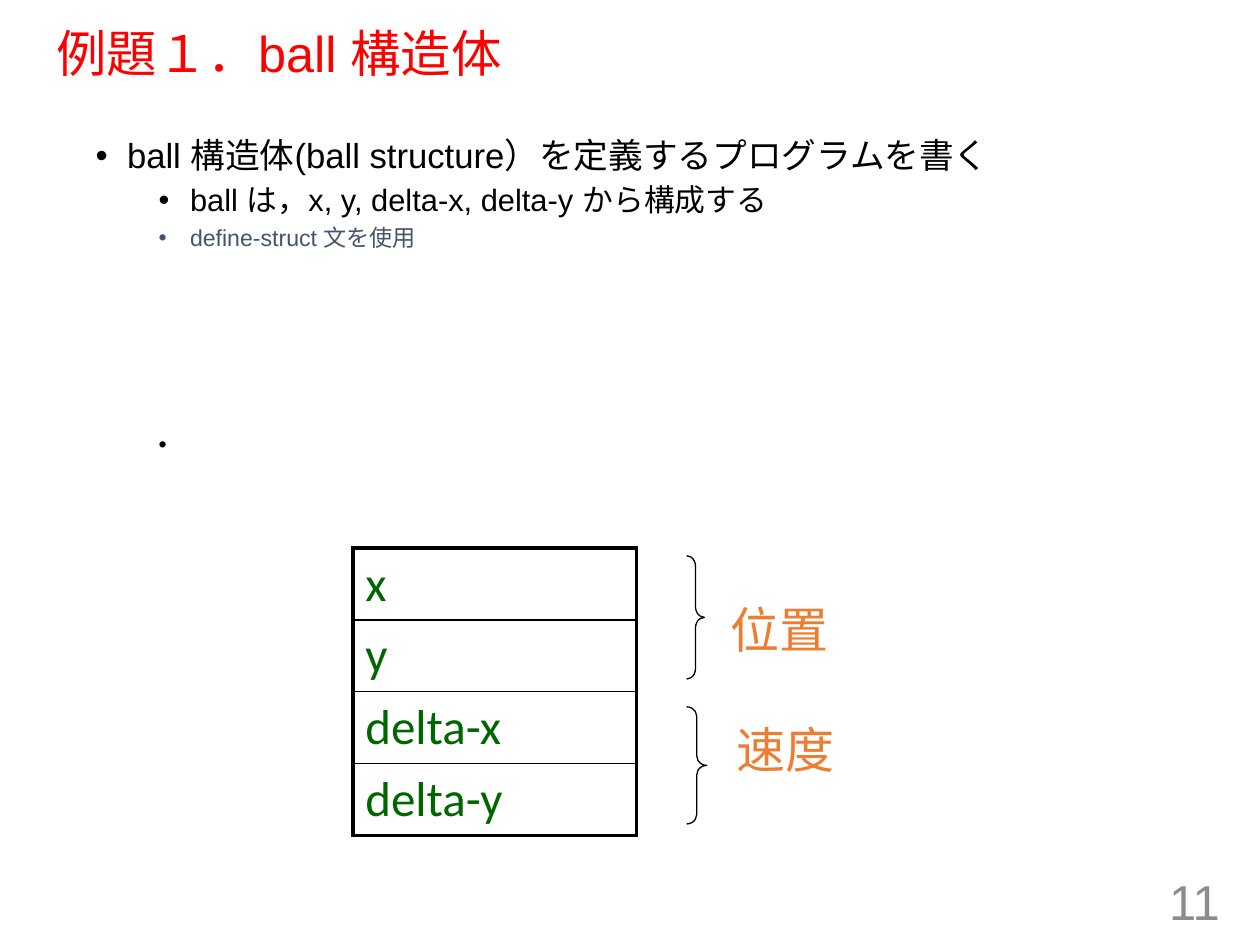
from pptx import Presentation
from pptx.dml.color import RGBColor
from pptx.enum.shapes import MSO_SHAPE
from pptx.enum.text import MSO_ANCHOR, PP_ALIGN
from pptx.oxml.ns import qn
from pptx.util import Inches, Pt
from lxml.etree import SubElement

COLORS = {"black": "000000", "title": "FF0000", "slate": "44546A",
          "orange": "ED7D31", "green": "006600", "gray": "8C8C8C"}

TITLE = "例題１．ball 構造体"
# text, left indent, size, color, space before
BULLETS = [
    ("ball 構造体(ball structure）を定義するプログラムを書く", 0.25, 19.8, "black", 0),
    ("ball は，x, y, delta-x, delta-y から構成する", 0.75, 17.6, "black", 5),
    ("define-struct 文を使用", 0.75, 13.2, "slate", 5),
    ("\t", 0.75, 13.2, "black", 104),
]
FIELDS = ["x", "y", "delta-x", "delta-y"]
# label, label left and top, brace top, width, height and curl
GROUPS = [("位置", 5.7, 4.71, 4.41, 0.14, 0.98, 0.6),
          ("速度", 5.75, 5.66, 5.61, 0.16, 0.93, 0.47)]
PAGE = "11"


def rgb(name):
    return RGBColor.from_string(COLORS[name])


def style(p, size, color, name="Arial"):
    for r in p.runs:
        r.font.size = Pt(size)
        r.font.name = name
        r.font.color.rgb = rgb(color)


def add_text(s, box, text, size, color, name="Arial", wrap=True,
             anchor=MSO_ANCHOR.TOP):
    tf = s.shapes.add_textbox(*map(Inches, box)).text_frame
    tf.word_wrap = wrap
    tf.vertical_anchor = anchor
    tf.text = text
    p = tf.paragraphs[0]
    style(p, size, color, name)
    return p


def add_bullets(s):
    tf = s.shapes.add_textbox(*map(Inches, (0.66, 1.05, 8.99, 2.85))).text_frame
    tf.word_wrap = True
    for i, (text, indent, size, color, before) in enumerate(BULLETS):
        p = tf.add_paragraph() if i else tf.paragraphs[0]
        p.text = text
        p.line_spacing = 0.9
        if before:
            p.space_before = Pt(before)
        pPr = p._p.get_or_add_pPr()
        pPr.set("marL", str(Inches(indent)))
        pPr.set("indent", str(Inches(-0.25)))
        SubElement(pPr, qn("a:buFont"), typeface="Arial")
        SubElement(pPr, qn("a:buChar"), char="•")
        style(p, size, color)


def set_borders(cell, widths):
    tcPr = cell._tc.get_or_add_tcPr()
    for i, (side, width) in enumerate(widths.items()):
        ln = SubElement(tcPr, qn(f"a:{side}"), w=str(Pt(width)))
        fill = SubElement(ln, qn("a:solidFill"))
        SubElement(fill, qn("a:srgbClr"), val=COLORS["black"])
        tcPr.insert(i, ln)


def add_field_table(s):
    table = s.shapes.add_table(len(FIELDS), 1, Inches(2.8), Inches(4.35),
                               Inches(2.25), Inches(2.28)).table
    table.first_row = table.horz_banding = False
    last = len(FIELDS) - 1
    for i, field in enumerate(FIELDS):
        cell = table.cell(i, 0)
        cell.text = field
        style(cell.text_frame.paragraphs[0], 28, "green", "Calibri")
        cell.fill.background()
        set_borders(cell, {"lnL": 2.25, "lnR": 2.25,
                           "lnT": 2.25 if i == 0 else 1,
                           "lnB": 2.25 if i == last else 1})


def add_group(s, label, left, top, brace_top, width, height, curl):
    sp = s.shapes.add_shape(MSO_SHAPE.RIGHT_BRACE, Inches(5.45),
                            Inches(brace_top), Inches(width), Inches(height))
    sp.adjustments[0] = curl
    sp.shadow.inherit = False
    sp.fill.background()
    sp.line.color.rgb = rgb("black")
    sp.line.width = Pt(0.75)
    add_text(s, (left, top, 0.98, 0.57), label, 28, "orange", "Calibri", wrap=False)


def main():
    prs = Presentation()
    prs.slide_width, prs.slide_height = Inches(10), Inches(7.5)
    s = prs.slides.add_slide(prs.slide_layouts[6])
    title = add_text(s, (0.35, 0.19, 9.25, 0.51), TITLE, 28.8, "title",
                     anchor=MSO_ANCHOR.MIDDLE)
    title.line_spacing = 0.9
    add_bullets(s)
    add_field_table(s)
    for group in GROUPS:
        add_group(s, *group)
    page = add_text(s, (7.53, 6.95, 2.25, 0.4), PAGE, 28, "gray",
                    anchor=MSO_ANCHOR.MIDDLE)
    page.alignment = PP_ALIGN.RIGHT
    prs.save("out.pptx")


if __name__ == "__main__":
    main()
